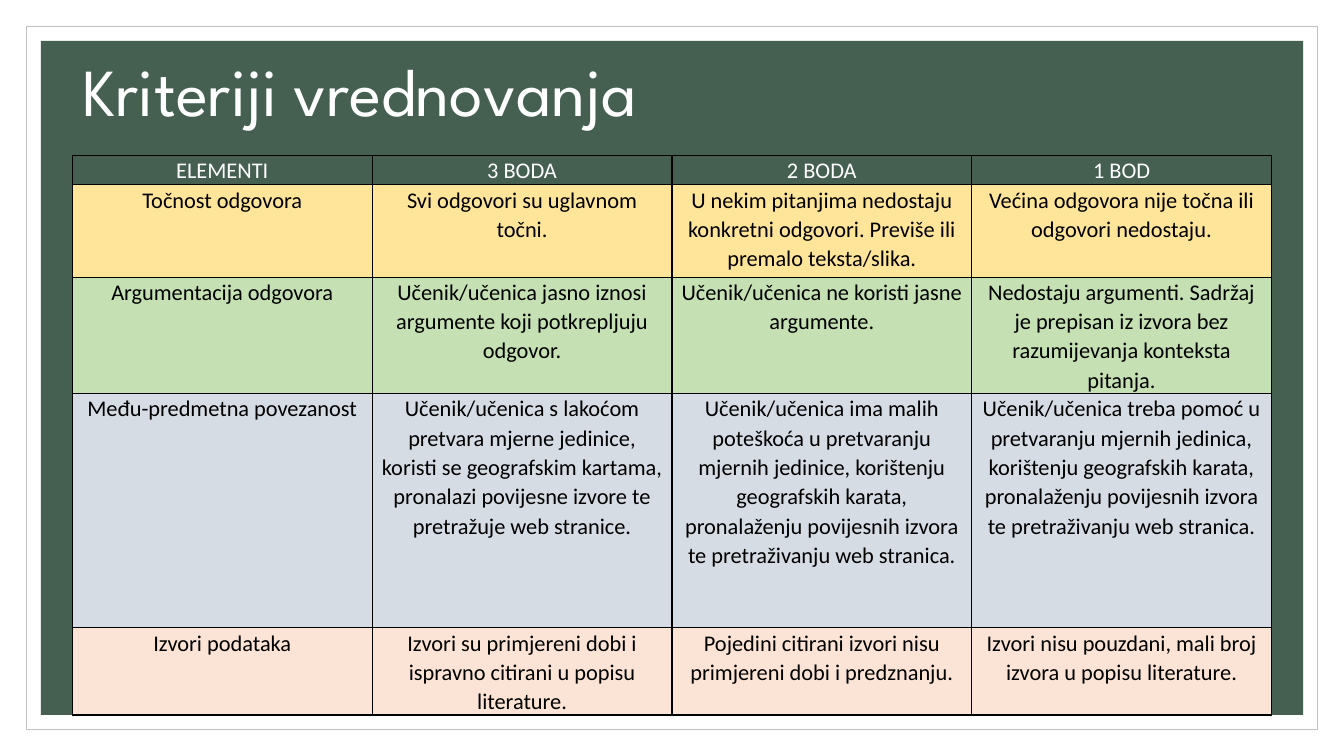
from lxml.etree import SubElement
from pptx import Presentation
from pptx.dml.color import RGBColor
from pptx.enum.shapes import MSO_SHAPE
from pptx.enum.text import MSO_ANCHOR, PP_ALIGN
from pptx.oxml.ns import qn
from pptx.util import Pt

PX = 9525  # 96 px to the inch

WHITE = RGBColor(0xFF, 0xFF, 0xFF)
BLACK = RGBColor(0x00, 0x00, 0x00)
GRAY = RGBColor(0xBF, 0xBF, 0xBF)
GREEN = RGBColor(0x45, 0x5F, 0x51)
YELLOW = RGBColor(0xFF, 0xE5, 0x99)
LIME = RGBColor(0xC5, 0xE0, 0xB3)
BLUE_GRAY = RGBColor(0xD5, 0xDC, 0xE4)
PEACH = RGBColor(0xFB, 0xE4, 0xD5)

PAGE_SIZE = (1280, 720)
TITLE_BOX = (69, 31, 1056, 118)
TABLE_BOX = (69, 148, 1142, 533)

# Each row: height, fill, cell texts
CRITERIA = [
    (28, None, ["ELEMENTI", "3 BODA", "2 BODA", "1 BOD"]),
    (88, YELLOW, [
        "Točnost odgovora",
        "Svi odgovori su uglavnom točni.",
        "U nekim pitanjima nedostaju konkretni odgovori. Previše ili premalo teksta/slika.",
        "Većina odgovora nije točna ili odgovori nedostaju."]),
    (111, LIME, [
        "Argumentacija odgovora",
        "Učenik/učenica jasno iznosi argumente koji potkrepljuju odgovor.",
        "Učenik/učenica ne koristi jasne argumente.",
        "Nedostaju argumenti. Sadržaj je prepisan iz izvora bez razumijevanja "
        "konteksta pitanja."]),
    (223, BLUE_GRAY, [
        "Među-predmetna povezanost",
        "Učenik/učenica s lakoćom pretvara mjerne jedinice, koristi se geografskim "
        "kartama, pronalazi povijesne izvore te pretražuje web stranice.",
        "Učenik/učenica ima malih poteškoća u pretvaranju mjernih jedinice, korištenju "
        "geografskih karata, pronalaženju povijesnih izvora te pretraživanju web stranica.",
        "Učenik/učenica treba pomoć u pretvaranju mjernih jedinica, korištenju geografskih "
        "karata, pronalaženju povijesnih izvora te pretraživanju web stranica."]),
    (83, PEACH, [
        "Izvori podataka",
        "Izvori su primjereni dobi i ispravno citirani u popisu literature.",
        "Pojedini citirani izvori nisu primjereni dobi i predznanju.",
        "Izvori nisu pouzdani, mali broj izvora u popisu literature."]),
]


def scaled(box):
    return [length * PX for length in box]


def add_span(para, text, font, size, color):
    span = para.add_run()
    span.text = text
    span.font.name = font
    span.font.size = Pt(size)
    span.font.bold = False
    span.font.color.rgb = color


def add_panel(page, box, fill, line=None):
    panel = page.shapes.add_shape(MSO_SHAPE.RECTANGLE, *scaled(box))
    panel.shadow.inherit = False
    panel.fill.solid()
    panel.fill.fore_color.rgb = fill
    if line is None:
        panel.line.fill.background()
    else:
        panel.line.color.rgb = line
        panel.line.width = Pt(0.5)


def add_background(page, box):
    # Thin outer frame, then the green panel
    left, top, width, height = box
    for inset, fill, line in ((25, WHITE, GRAY), (39, GREEN, None)):
        add_panel(page, (left + inset, top + inset,
                         width - 2 * inset, height - 2 * inset), fill, line)


def add_title(page, box, text):
    frame = page.shapes.add_textbox(*scaled(box)).text_frame
    frame.word_wrap = True
    frame.vertical_anchor = MSO_ANCHOR.MIDDLE
    para = frame.paragraphs[0]
    para.line_spacing = 0.9
    add_span(para, text, "League Spartan", 48, WHITE)


def add_borders(cell):
    properties = cell._tc.get_or_add_tcPr()
    for index, side in enumerate(("a:lnL", "a:lnR", "a:lnT", "a:lnB")):
        border = SubElement(properties, qn(side), w=str(Pt(1)))
        solid = SubElement(border, qn("a:solidFill"))
        SubElement(solid, qn("a:srgbClr"), val=str(BLACK))
        properties.insert(index, border)  # borders come before the fill


def fill_cell(cell, text, fill):
    cell.margin_left = cell.margin_right = 7 * PX
    cell.margin_top = cell.margin_bottom = 0
    if fill is None:
        cell.fill.background()
    else:
        cell.fill.solid()
        cell.fill.fore_color.rgb = fill
    para = cell.text_frame.paragraphs[0]
    para.alignment = PP_ALIGN.CENTER
    para.line_spacing = 1.07
    add_span(para, text, "Calibri", 16, WHITE if fill is None else BLACK)
    add_borders(cell)


def add_criteria_table(page, box, criteria):
    columns = len(criteria[0][2])
    table = page.shapes.add_table(len(criteria), columns, *scaled(box)).table
    table.first_row = False
    table.horz_banding = False
    for row, (height, fill, texts) in enumerate(criteria):
        table.rows[row].height = height * PX
        for column, text in enumerate(texts):
            fill_cell(table.cell(row, column), text, fill)


def main():
    deck = Presentation()
    deck.slide_width, deck.slide_height = scaled(PAGE_SIZE)
    page = deck.slides.add_slide(deck.slide_layouts[6])
    add_background(page, (0, 0, *PAGE_SIZE))
    add_title(page, TITLE_BOX, "Kriteriji vrednovanja")
    add_criteria_table(page, TABLE_BOX, CRITERIA)
    deck.save("out.pptx")


if __name__ == "__main__":
    main()
